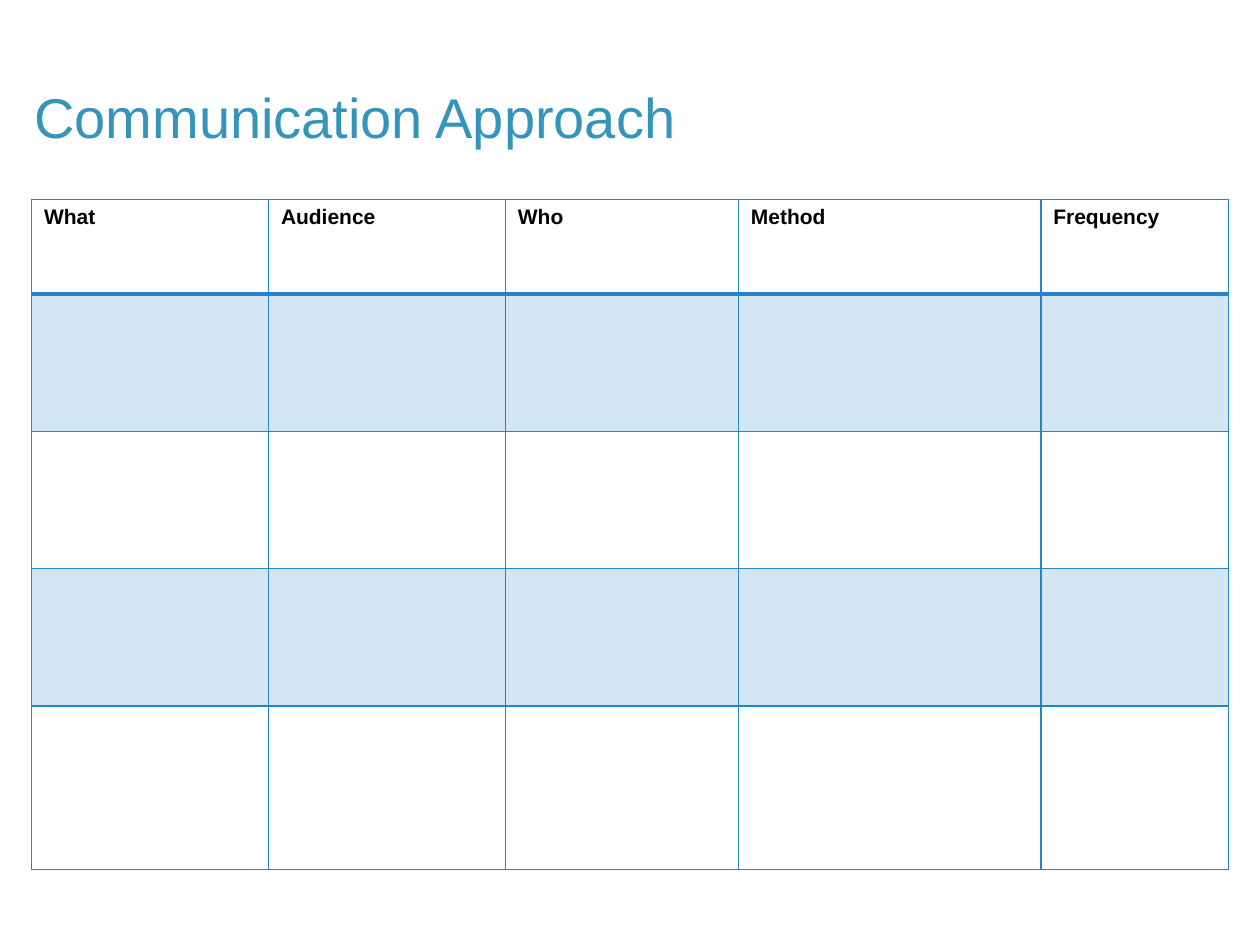
from lxml.etree import SubElement
from pptx import Presentation
from pptx.dml.color import RGBColor
from pptx.enum.text import MSO_ANCHOR, PP_ALIGN
from pptx.oxml.ns import qn
from pptx.util import Pt

TEAL = RGBColor(0x34, 0x94, 0xBA)
BLUE = RGBColor(0x26, 0x83, 0xC6)
BLACK = RGBColor(0, 0, 0)

HEADS = ["What", "Audience", "Who", "Method", "Frequency"]
WIDTHS = [135.4, 135.4, 133.2, 172.8, 107.2]
HEIGHTS = [54, 78.5, 78.5, 78.5, 93.5]


class Deck:
    face = "Arial"

    def __init__(self, wide, high):
        self.show = Presentation()
        self.show.slide_width = Pt(wide)
        self.show.slide_height = Pt(high)
        self.slide = self.show.slides.add_slide(self.show.slide_layouts[5])

    def apply(self, item, **values):
        for name, value in values.items():
            setattr(item, name, value)

    def label(self, para, text, size, color, bold=False):
        run = para.add_run()
        run.text = text
        self.apply(run.font, name=self.face, size=Pt(size), bold=bold)
        run.font.color.rgb = color

    def title(self, text, left, top, width, height):
        shape = self.slide.shapes.title
        self.apply(shape, left=Pt(left), top=Pt(top),
                   width=Pt(width), height=Pt(height))
        frame = shape.text_frame
        self.apply(frame, word_wrap=True, vertical_anchor=MSO_ANCHOR.MIDDLE,
                   margin_left=0, margin_top=0, margin_right=0, margin_bottom=0)
        para = frame.paragraphs[0]
        para.alignment = PP_ALIGN.LEFT
        self.label(para, text, 32, TEAL)

    def border(self, cell, sides):
        props = cell._tc.get_or_add_tcPr()
        for side, weight in sides.items():
            line = SubElement(props, qn(f"a:ln{side}"), w=str(Pt(weight)))
            fill = SubElement(line, qn("a:solidFill"))
            SubElement(fill, qn("a:srgbClr"), val=str(BLUE))

    def shade(self, cell, banded):
        if not banded:
            cell.fill.background()
            return
        cell.fill.solid()
        cell.fill.fore_color.rgb = BLUE
        color = cell._tc.tcPr.find(qn("a:solidFill")).find(qn("a:srgbClr"))
        SubElement(color, qn("a:alpha"), val="20000")

    def table(self, left, top, heads, widths, heights):
        frame = self.slide.shapes.add_table(
            len(heights), len(widths), Pt(left), Pt(top),
            Pt(sum(widths)), Pt(sum(heights)))
        grid = frame.table
        for col, width in zip(grid.columns, widths):
            col.width = Pt(width)
        for index, (row, height) in enumerate(zip(grid.rows, heights)):
            row.height = Pt(height)
            upper = 2 if index == 1 else 1
            lower = 2 if index == 0 else 1
            for cell in row.cells:
                self.border(cell, {"L": 1, "R": 1, "T": upper, "B": lower})
                self.shade(cell, index % 2 == 1)
        for cell, head in zip(grid.rows[0].cells, heads):
            self.label(cell.text_frame.paragraphs[0], head, 12, BLACK, True)


def main():
    deck = Deck(720, 540)
    deck.title("Communication Approach", 19.5, 21.5, 664.5, 90)
    deck.table(18, 114, HEADS, WIDTHS, HEIGHTS)
    deck.show.save("out.pptx")


if __name__ == "__main__":
    main()
